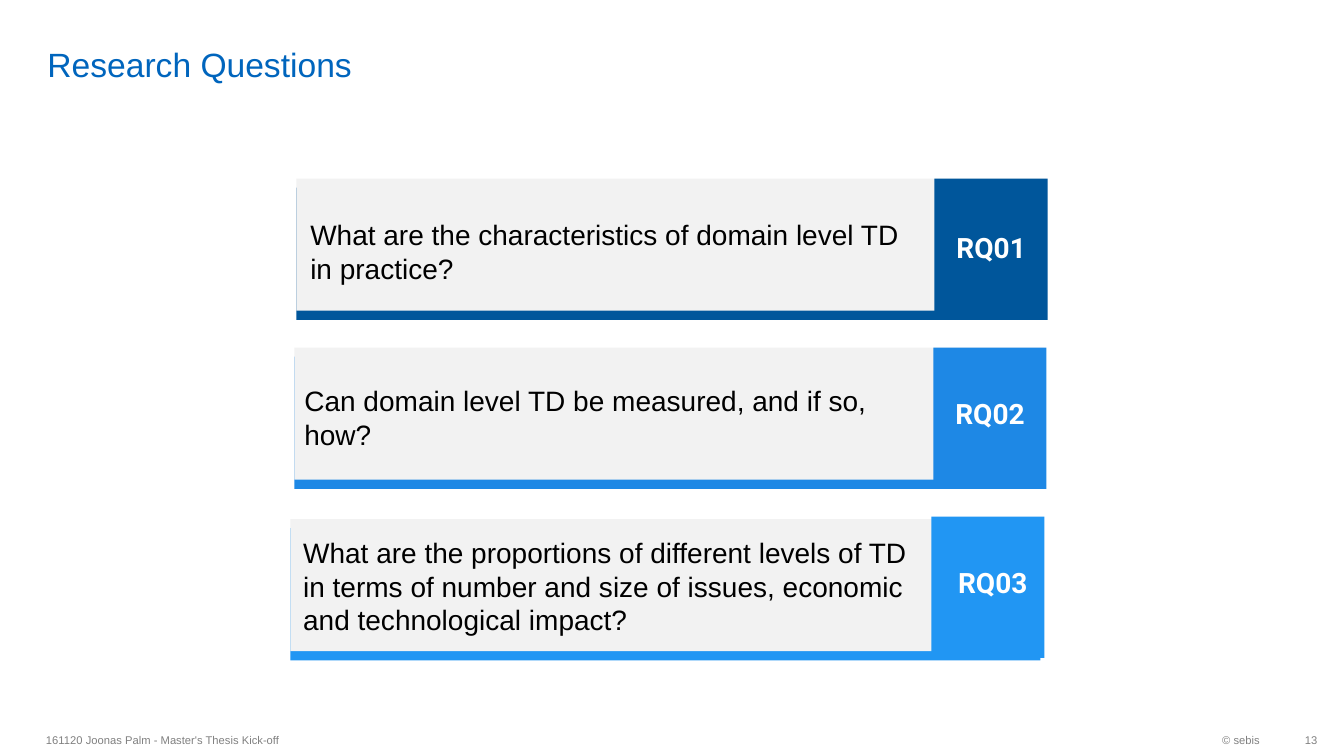
from dataclasses import dataclass
from pptx import Presentation
from pptx.dml.color import RGBColor
from pptx.enum.shapes import MSO_SHAPE
from pptx.enum.text import MSO_ANCHOR, PP_ALIGN
from pptx.util import Cm, Pt

RECT = MSO_SHAPE.RECTANGLE
MIDDLE, BOTTOM = MSO_ANCHOR.MIDDLE, MSO_ANCHOR.BOTTOM
LEFT, CENTER, RIGHT = PP_ALIGN.LEFT, PP_ALIGN.CENTER, PP_ALIGN.RIGHT


@dataclass(frozen=True)
class Theme:
    title: str = "0065BD"
    text: str = "000000"
    muted: str = "808080"
    card: str = "F2F2F2"
    white: str = "FFFFFF"
    font: str = "Arial"
    label_font: str = "Roboto"
    title_size: int = 24
    body_size: int = 20
    footer_size: int = 8


THEME = Theme()


def write(tf, text, size, color, font=THEME.font, bold=False, align=LEFT,
          anchor=MIDDLE, wrap=True):
    """Fill a text frame with one formatted paragraph."""
    tf.word_wrap = wrap
    tf.vertical_anchor = anchor
    p = tf.paragraphs[0]
    p.alignment = align
    r = p.add_run()
    r.text = text
    r.font.name, r.font.size, r.font.bold = font, Pt(size), bold
    r.font.color.rgb = RGBColor.from_string(color)


class Deck:
    def __init__(self, theme):
        self.theme = theme
        self.prs = Presentation()
        self.prs.slide_width, self.prs.slide_height = Cm(33.87), Cm(19.05)
        self.s = self.prs.slides.add_slide(self.prs.slide_layouts[5])

    def title(self, text, box):
        sp = self.s.shapes.title
        sp.left, sp.top, sp.width, sp.height = map(Cm, box)
        tf = sp.text_frame
        tf.margin_top = tf.margin_bottom = 0
        write(tf, text, self.theme.title_size, self.theme.title, anchor=BOTTOM)

    def rect(self, shapes, box, color):
        sp = shapes.add_shape(RECT, *map(Cm, box))
        sp.shadow.inherit = False
        sp.fill.solid()
        sp.fill.fore_color.rgb = RGBColor.from_string(color)
        sp.line.fill.background()

    def text(self, shapes, text, box, size, color, margin_right=0.25, **fmt):
        tf = shapes.add_textbox(*map(Cm, box)).text_frame
        tf.margin_right = Cm(margin_right)
        write(tf, text, size, color, **fmt)

    def footer(self, text, box, **fmt):
        self.text(self.s.shapes, text, box, self.theme.footer_size,
                  self.theme.muted, **fmt)

    def question(self, number, text, color, card, tab, text_box, label):
        """Grey card over a coloured base, with a numbered tab at its right."""
        t = self.theme
        shapes = self.s.shapes.add_group_shape().shapes
        left, top = card
        self.rect(shapes, (left, top + 0.23, 18.9, 3.33), color)
        self.rect(shapes, (left, top, 18.9, 3.33), t.card)
        self.rect(shapes, (*tab, 2.85, 3.56), color)
        self.text(shapes, text, text_box, t.body_size, t.text)
        self.text(shapes, f"RQ{number:02}", (*label, 2.36, 1.12), t.body_size,
                  t.white, font=t.label_font, bold=True, align=CENTER, wrap=False)


# Each row: text, colour, card corner, tab corner, text box, label corner
QUESTIONS = [
    ("What are the characteristics of domain level TD in practice?", "00569B",
     (7.47, 4.5), (23.55, 4.5), (7.57, 5.36, 15.9, 1.96), (23.8, 5.66)),
    ("Can domain level TD be measured, and if so, how?", "1E88E5",
     (7.42, 8.76), (23.52, 8.76), (7.42, 9.53, 16.1, 1.96), (23.77, 9.86)),
    ("What are the proportions of different levels of TD in terms of number "
     "and size of issues, economic and technological impact?", "2196F3",
     (7.32, 13.08), (23.47, 13.02), (7.39, 13.36, 16, 2.82), (23.84, 14.12)),
]


def main():
    deck = Deck(THEME)
    deck.title("Research Questions", (0.94, 0.13, 29.41, 2))

    # Research questions
    for number, row in enumerate(QUESTIONS, 1):
        deck.question(number, *row)

    # Footer
    deck.footer("161120 Joonas Palm - Master's Thesis Kick-off",
                (0.91, 18.24, 16, 0.81))
    deck.footer("© sebis", (26.06, 18.24, 5.94, 0.81), align=RIGHT)
    deck.footer("13", (32, 18.24, 1.2, 0.81), align=RIGHT, margin_right=0)

    deck.prs.save("out.pptx")


if __name__ == "__main__":
    main()
